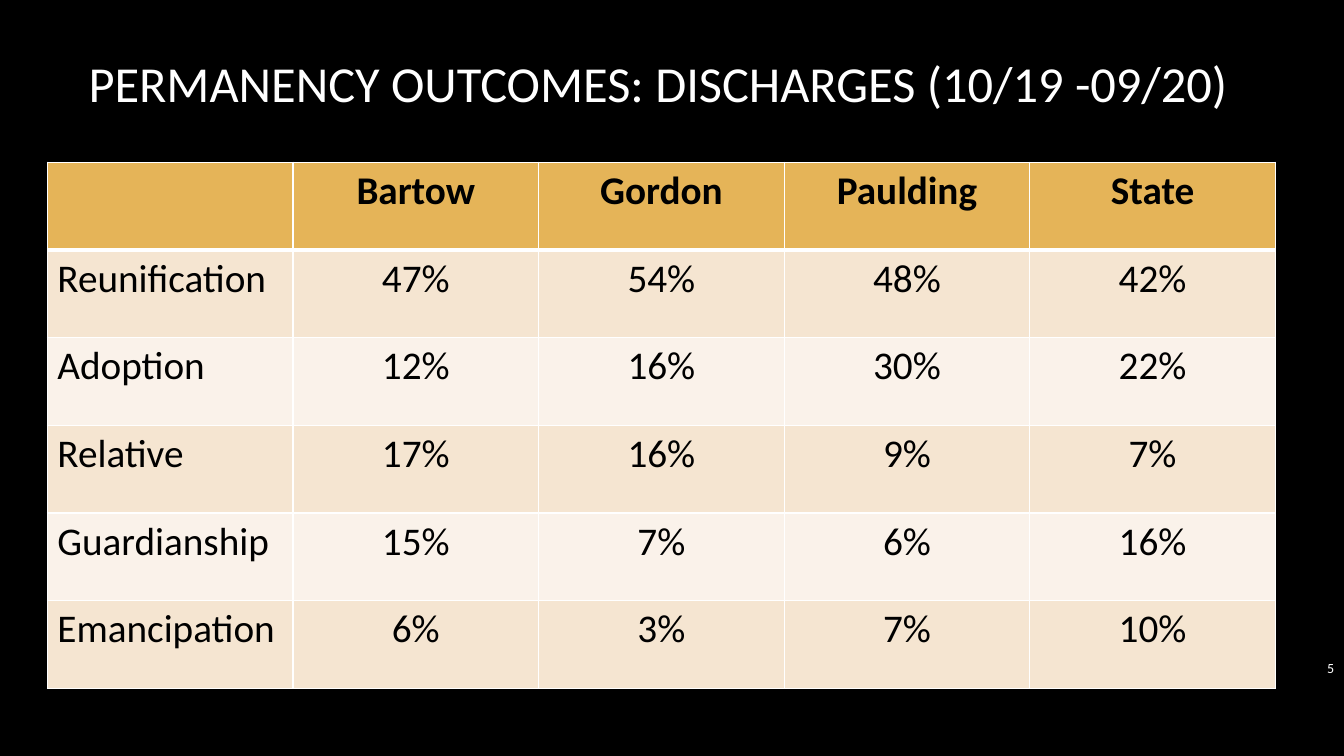
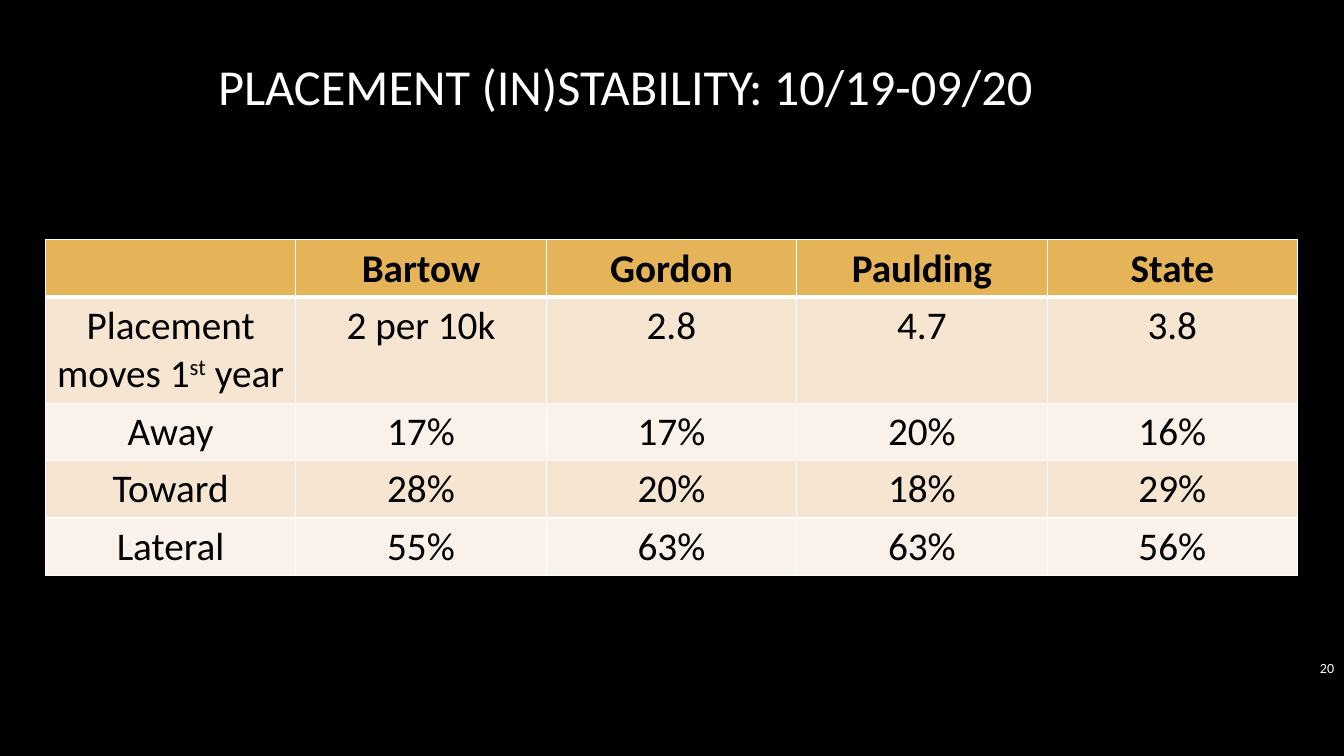
from lxml import etree
from pptx import Presentation
from pptx.dml.color import RGBColor
from pptx.enum.text import MSO_ANCHOR, PP_ALIGN
from pptx.oxml.ns import qn
from pptx.util import Inches, Pt

CENTER, LEFT, RIGHT = PP_ALIGN.CENTER, PP_ALIGN.LEFT, PP_ALIGN.RIGHT
MIDDLE = MSO_ANCHOR.MIDDLE
SLIDE_WIDTH, SLIDE_HEIGHT = 13.33, 7.5
FONT = "Calibri"
BLACK, WHITE, GOLD = "000000", "FFFFFF", "E5B458"
BANDS = ("F5E5D1", "FAF2EA")
TITLE_SIZE, TABLE_SIZE, NUMBER_SIZE = 36, 28, 10
NUMBER_BOX = (12.73, 6.42, 0.6, 0.41)
THIN, THICK = 1, 3
COUNTIES = ("", "Bartow", "Gordon", "Paulding", "State")

DISCHARGES = (
    COUNTIES,
    ("Reunification", "47%", "54%", "48%", "42%"),
    ("Adoption", "12%", "16%", "30%", "22%"),
    ("Relative", "17%", "16%", "9%", "7%"),
    ("Guardianship", "15%", "7%", "6%", "16%"),
    ("Emancipation", "6%", "3%", "7%", "10%"),
)
STABILITY = (
    COUNTIES,
    ("Placement moves 1^st^ year", "2 per 10k", "2.8", "4.7", "3.8"),
    ("Away", "17%", "17%", "20%", "16%"),
    ("Toward", "28%", "20%", "18%", "29%"),
    ("Lateral", "55%", "63%", "63%", "56%"),
)


def color(value):
    return RGBColor.from_string(value)


def write(paragraph, text, size, text_color, alignment, bold=False):
    paragraph.alignment = alignment
    font = paragraph.font
    font.name, font.size, font.bold = FONT, Pt(size), bold
    font.color.rgb = color(text_color)
    for index, part in enumerate(text.split("^")):
        run = paragraph.add_run()
        run.text = part
        if index % 2:
            run.font._element.set("baseline", "30000")


def add_text(slide, box, text, size, alignment):
    shape = slide.shapes.add_textbox(*map(Inches, box))
    frame = shape.text_frame
    frame.word_wrap = True
    frame.vertical_anchor = MIDDLE
    write(frame.paragraphs[0], text, size, WHITE, alignment)


def set_borders(cell, top, bottom):
    properties = cell._tc.get_or_add_tcPr()
    widths = {"lnL": THIN, "lnR": THIN, "lnT": top, "lnB": bottom}
    for side, width in widths.items():
        line = etree.SubElement(properties, qn(f"a:{side}"), w=str(Pt(width)))
        fill = etree.SubElement(line, qn("a:solidFill"))
        etree.SubElement(fill, qn("a:srgbClr"), val=WHITE)


def add_table(slide, box, rows, row_heights, label_alignment):
    shape = slide.shapes.add_table(len(rows), len(rows[0]), *map(Inches, box))
    table = shape.table
    for column in table.columns:
        column.width = Inches(box[2] / len(rows[0]))
    for row_index, (values, height) in enumerate(zip(rows, row_heights)):
        header = row_index == 0
        table.rows[row_index].height = Inches(height)
        for column_index, value in enumerate(values):
            cell = table.cell(row_index, column_index)
            set_borders(cell, THICK if row_index == 1 else THIN, THICK if header else THIN)
            cell.fill.solid()
            cell.fill.fore_color.rgb = color(GOLD if header else BANDS[(row_index - 1) % 2])
            if value:
                alignment = CENTER if column_index else label_alignment
                write(cell.text_frame.paragraphs[0], value, TABLE_SIZE, BLACK, alignment, header)


def add_table_slide(presentation, title, title_box, number, table_box, rows, row_heights, label_alignment):
    slide = presentation.slides.add_slide(presentation.slide_layouts[6])
    slide.background.fill.solid()
    slide.background.fill.fore_color.rgb = color(BLACK)
    add_text(slide, title_box, title, TITLE_SIZE, CENTER)
    add_table(slide, table_box, rows, row_heights, label_alignment)
    add_text(slide, NUMBER_BOX, number, NUMBER_SIZE, RIGHT)


def main():
    presentation = Presentation()
    presentation.slide_width = Inches(SLIDE_WIDTH)
    presentation.slide_height = Inches(SLIDE_HEIGHT)
    add_table_slide(
        presentation, "PERMANENCY OUTCOMES: DISCHARGES (10/19 -09/20)", (0.4, 0.02, 12.26, 1.59),
        "5", (0.47, 1.61, 12.18, 5.22), DISCHARGES, [0.87] * 6, LEFT,
    )
    add_table_slide(
        presentation, "PLACEMENT (IN)STABILITY: 10/19-09/20", (0.31, 0.05, 11.79, 1.59),
        "20", (0.45, 2.38, 12.42, 3.33), STABILITY, [0.57, 1.05] + [0.57] * 3, CENTER,
    )
    presentation.save("out.pptx")


if __name__ == "__main__":
    main()
